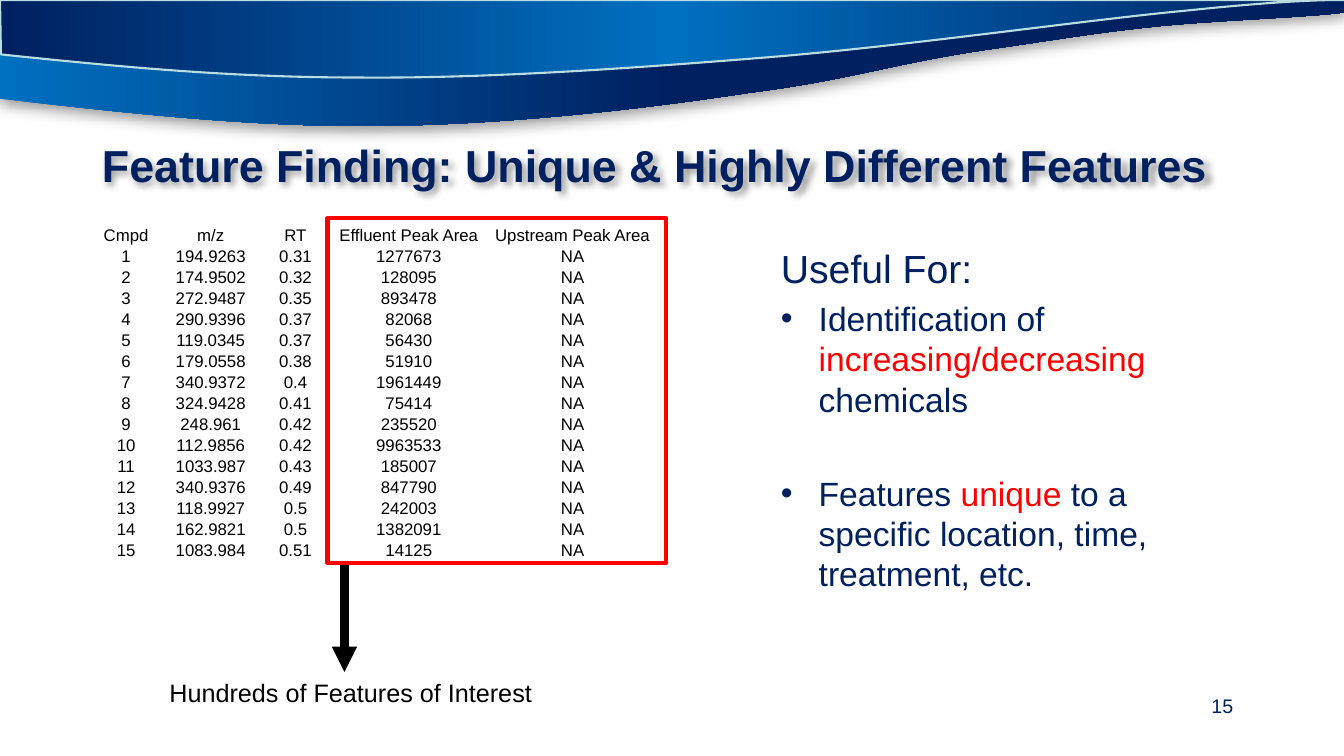
from dataclasses import dataclass, field
from typing import Any

from lxml.etree import SubElement
from pptx import Presentation
from pptx.dml.color import RGBColor
from pptx.enum.shapes import MSO_CONNECTOR, MSO_SHAPE
from pptx.enum.text import MSO_ANCHOR, PP_ALIGN
from pptx.oxml import parse_xml
from pptx.oxml.ns import nsdecls, qn
from pptx.util import Pt

NAVY = RGBColor(0x00, 0x20, 0x60)
BLUE = RGBColor(0x00, 0x70, 0xC0)
PALE = RGBColor(0xBA, 0xDD, 0xE1)
RED = RGBColor(0xFF, 0x00, 0x00)
BLACK = RGBColor(0x00, 0x00, 0x00)

Point = tuple[float, float]


@dataclass
class Span:
    text: str
    color: RGBColor = NAVY
    font: dict[str, Any] = field(default_factory=dict)


@dataclass
class Para:
    spans: list[Span]
    layout: dict[str, Any] = field(default_factory=dict)
    bullet: bool = False


@dataclass
class TextBox:
    left: float
    top: float
    width: float
    height: float
    paras: list[Para]
    frame: dict[str, Any] = field(default_factory=dict)
    shadow: tuple[float, float, int] | None = None


@dataclass
class Wave:
    start: Point
    curves: list[tuple[Point, Point, Point]]
    corners: list[Point]
    stops: list[RGBColor]
    outline: RGBColor | None = None
    shadow: tuple[float, float, int] | None = None


WAVES = [
    Wave((0, 70.6),
         [((90, 80.6), (177.1, 90.7), (268.6, 90)),
          ((357.8, 89.3), (455.8, 78.5), (535.7, 66.2)),
          ((609.1, 56.9), (640.1, 44.6), (711.4, 34.6)),
          ((760.3, 27.4), (786.2, 23), (828, 18.7)),
          ((870.5, 14.4), (939.6, 12.2), (961.9, 8.6))],
         [(961.2, 0), (0, 0.7)], [BLUE, NAVY, NAVY], shadow=(10, 3, 90)),
    Wave((0.7, 38.9),
         [((82.8, 47.5), (164.2, 55.4), (255.6, 55.4)),
          ((346.3, 56.2), (449.3, 49), (547.9, 41)),
          ((645.8, 33.1), (775.4, 14.4), (844.6, 7.9)),
          ((913, 0.7), (943.2, 0), (960, 0))],
         [(0, 0)], [NAVY, BLUE, NAVY], outline=PALE),
]

HEADINGS = ["Cmpd", "m/z", "RT", "Effluent Peak Area", "Upstream Peak Area"]
COLUMN_WIDTHS = [60.5, 60.5, 60.5, 101.5, 132.5]
ROW_HEIGHT = 15
COMPOUNDS = [
    ("194.9263", "0.31", "1277673"), ("174.9502", "0.32", "128095"),
    ("272.9487", "0.35", "893478"), ("290.9396", "0.37", "82068"),
    ("119.0345", "0.37", "56430"), ("179.0558", "0.38", "51910"),
    ("340.9372", "0.4", "1961449"), ("324.9428", "0.41", "75414"),
    ("248.961", "0.42", "235520"), ("112.9856", "0.42", "9963533"),
    ("1033.987", "0.43", "185007"), ("340.9376", "0.49", "847790"),
    ("118.9927", "0.5", "242003"), ("162.9821", "0.5", "1382091"),
    ("1083.984", "0.51", "14125"),
]

CENTER = {"alignment": PP_ALIGN.CENTER}
BODY = {"size": Pt(24)}
BODY_LINE = {"line_spacing": Pt(28.8)}
TEXT_BOXES = [
    TextBox(688, 492, 200, 36,
            [Para([Span("15", font={"size": Pt(14)})], {"alignment": PP_ALIGN.RIGHT})]),
    TextBox(60, 90, 816, 54.5,
            [Para([Span("Feature Finding: Unique & Highly Different Features",
                        font={"size": Pt(32), "bold": True})], CENTER)],
            {"vertical_anchor": MSO_ANCHOR.MIDDLE}, shadow=(5, 3, 45)),
    TextBox(61.5, 480, 378, 29,
            [Para([Span("Hundreds of Features of Interest", BLACK, {"size": Pt(18)})], CENTER)]),
    TextBox(550.7, 170.8, 334, 264, [
        Para([Span("Useful For:", font={"size": Pt(28)})]),
        Para([Span("Identification of ", font=BODY),
              Span("increasing/decreasing", RED, BODY),
              Span(" chemicals", font=BODY)],
             BODY_LINE | {"space_before": Pt(4.8)}, bullet=True),
        Para([Span("Features ", font=BODY), Span("unique", RED, BODY),
              Span(" to a specific location, time, treatment, etc.", font=BODY)],
             BODY_LINE | {"space_before": Pt(38.4)}, bullet=True),
    ]),
]


def set_values(target: Any, values: dict[str, Any]) -> None:
    for name, value in values.items():
        setattr(target, name, value)


def add_shadow(shape: Any, blur: float, distance: float, angle: int) -> None:
    for old in shape._element.spPr.findall(qn("a:effectLst")):
        shape._element.spPr.remove(old)
    shape._element.spPr.append(parse_xml(
        f'<a:effectLst {nsdecls("a")}><a:outerShdw blurRad="{Pt(blur)}" dist="{Pt(distance)}" '
        f'dir="{angle * 60000}" algn="tl" rotWithShape="0"><a:srgbClr val="000000">'
        '<a:alpha val="40000"/></a:srgbClr></a:outerShdw></a:effectLst>'))


def write_para(paragraph: Any, para: Para) -> None:
    if para.bullet:
        properties = paragraph._p.get_or_add_pPr()
        properties.set("marL", str(Pt(27)))
        properties.set("indent", str(-Pt(27)))
        SubElement(properties, qn("a:buFont")).set("typeface", "Arial")
        SubElement(properties, qn("a:buChar")).set("char", "•")
    set_values(paragraph, para.layout)
    for span in para.spans:
        run = paragraph.add_run()
        run.text = span.text
        set_values(run.font, {"name": "Arial"} | span.font)
        run.font.color.rgb = span.color


def draw_text(page: Any, box: TextBox) -> None:
    shape = page.shapes.add_textbox(Pt(box.left), Pt(box.top), Pt(box.width), Pt(box.height))
    frame = shape.text_frame
    set_values(frame, {"word_wrap": True} | box.frame)
    for index, para in enumerate(box.paras):
        write_para(frame.add_paragraph() if index else frame.paragraphs[0], para)
    if box.shadow:
        add_shadow(shape, *box.shadow)


def draw_wave(page: Any, wave: Wave) -> None:
    corners = [(Pt(x), Pt(y)) for x, y in [curve[-1] for curve in wave.curves] + wave.corners]
    builder = page.shapes.build_freeform(Pt(wave.start[0]), Pt(wave.start[1]))
    builder.add_line_segments(corners, close=True)
    shape = builder.convert_to_shape()
    # Bend the leading segments; both waves start at the top left corner of the page
    segments = list(shape._element.spPr.iter(qn("a:lnTo")))
    for segment, curve in zip(segments, wave.curves):
        segment.tag = qn("a:cubicBezTo")
        for child in list(segment):
            segment.remove(child)
        for x, y in curve:
            SubElement(segment, qn("a:pt"), x=str(Pt(x)), y=str(Pt(y)))
    shape.shadow.inherit = False
    shape.fill.gradient()
    shape.fill.gradient_angle = 0
    stops = shape._element.spPr.find(qn("a:gradFill")).find(qn("a:gsLst"))
    for old in list(stops):
        stops.remove(old)
    for index, color in enumerate(wave.stops):
        stop = SubElement(stops, qn("a:gs"), pos=str(index * 50000))
        SubElement(stop, qn("a:srgbClr"), val=str(color))
    if wave.outline:
        shape.line.color.rgb = wave.outline
        shape.line.width = Pt(1.5)
    else:
        shape.line.fill.background()
    if wave.shadow:
        add_shadow(shape, *wave.shadow)


def draw_table(page: Any) -> None:
    rows = [HEADINGS] + [[str(number), *values, "NA"] for number, values in enumerate(COMPOUNDS, 1)]
    table = page.shapes.add_table(len(rows), len(HEADINGS), Pt(59.8), Pt(160.7),
                                  Pt(sum(COLUMN_WIDTHS)), Pt(ROW_HEIGHT * len(rows))).table
    set_values(table, {"first_row": False, "horz_banding": False})
    for column, width in zip(table.columns, COLUMN_WIDTHS):
        column.width = Pt(width)
    cell_format = {"vertical_anchor": MSO_ANCHOR.MIDDLE, "margin_left": 0, "margin_right": 0,
                   "margin_top": 0, "margin_bottom": 0}
    for row, texts in zip(table.rows, rows):
        row.height = Pt(ROW_HEIGHT)
        for cell, text in zip(row.cells, texts):
            set_values(cell, cell_format)
            cell.fill.background()
            write_para(cell.text_frame.paragraphs[0],
                       Para([Span(text, BLACK, {"size": Pt(12)})], CENTER))


def draw_arrow(page: Any) -> None:
    arrow = page.shapes.add_connector(MSO_CONNECTOR.STRAIGHT, Pt(246), Pt(402), Pt(246), Pt(480))
    arrow.line.color.rgb = BLACK
    arrow.line.width = Pt(6)
    SubElement(arrow.line._get_or_add_ln(), qn("a:tailEnd"), type="triangle")
    SubElement(arrow._element.spPr, qn("a:effectLst"))


def draw_highlight(page: Any) -> None:
    frame = page.shapes.add_shape(MSO_SHAPE.RECTANGLE, Pt(234), Pt(156), Pt(242), Pt(246))
    frame.shadow.inherit = False
    frame.fill.background()
    frame.line.color.rgb = RED
    frame.line.width = Pt(3)


def main() -> None:
    deck = Presentation()
    set_values(deck, {"slide_width": Pt(960), "slide_height": Pt(540)})
    page = deck.slides.add_slide(deck.slide_layouts[6])
    # Banner
    for wave in WAVES:
        draw_wave(page, wave)
    # Peak table, arrow and text
    draw_table(page)
    draw_arrow(page)
    for box in TEXT_BOXES:
        draw_text(page, box)
    # Frame around the peak areas
    draw_highlight(page)
    deck.save("out.pptx")


if __name__ == "__main__":
    main()
